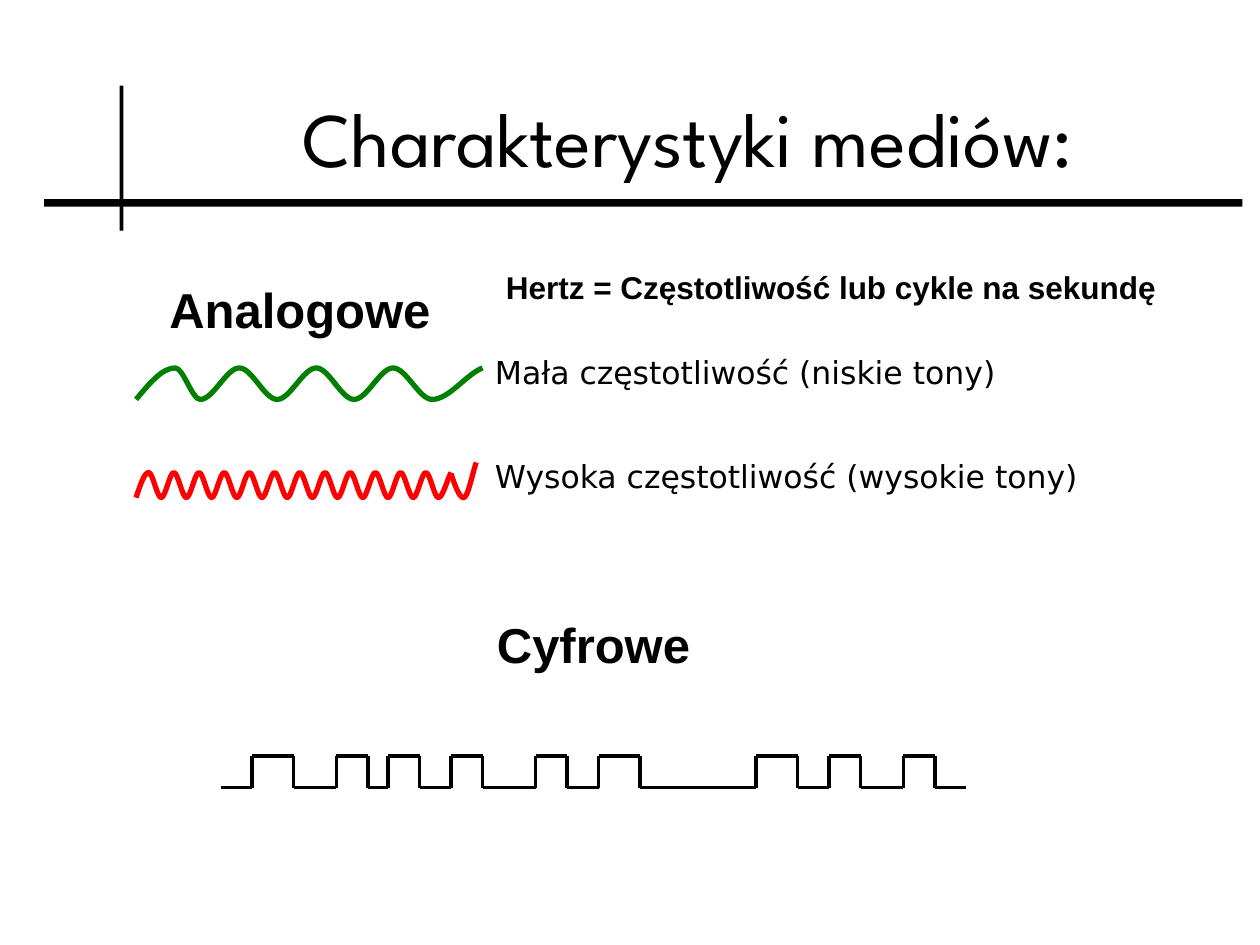
from itertools import pairwise

from lxml.etree import SubElement
from pptx import Presentation
from pptx.dml.color import RGBColor
from pptx.enum.shapes import MSO_CONNECTOR, MSO_SHAPE
from pptx.enum.text import MSO_ANCHOR, MSO_AUTO_SIZE, PP_ALIGN
from pptx.oxml.ns import qn
from pptx.util import Inches, Pt


def color(value):
    return RGBColor.from_string(value)


def bezier_points(knots):
    points = [knots[0][:2]]
    for (x0, y0, slope0), (x1, y1, slope1) in pairwise(knots):
        dx = (x1 - x0) / 3
        points += [(x0 + dx, y0 + slope0 * dx), (x1 - dx, y1 - slope1 * dx), (x1, y1)]
    return points


class SlideBuilder:
    """Holds the style and the current slide, and draws each kind of element."""

    ink = "000000"

    def __init__(self, prs):
        self.s = prs.slides.add_slide(prs.slide_layouts[6])

    def bar(self, x, y, w, h):
        sp = self.s.shapes.add_shape(
            MSO_SHAPE.RECTANGLE, Inches(x), Inches(y), Inches(w), Inches(h))
        sp.shadow.inherit = False
        sp.fill.solid()
        sp.fill.fore_color.rgb = color(self.ink)
        sp.line.fill.background()

    def text(self, x, y, w, h, text, size, font, bold=False, align=PP_ALIGN.CENTER,
             anchor=MSO_ANCHOR.TOP, fit=MSO_AUTO_SIZE.SHAPE_TO_FIT_TEXT):
        tf = self.s.shapes.add_textbox(
            Inches(x), Inches(y), Inches(w), Inches(h)).text_frame
        tf.word_wrap = True
        tf.auto_size = fit
        tf.vertical_anchor = anchor
        p = tf.paragraphs[0]
        p.text = text
        p.alignment = align
        p.font.size = Pt(size)
        p.font.name = font
        p.font.bold = bold
        p.font.color.rgb = color(self.ink)

    def wave(self, knots, line_color):
        start, *rest = [(Inches(x), Inches(y)) for x, y in bezier_points(knots)]
        builder = self.s.shapes.build_freeform(*start)
        builder.add_line_segments(rest, close=False)
        sp = builder.convert_to_shape()
        outline = next(sp._element.iter(qn("a:path")))
        segments = outline.findall(qn("a:lnTo"))
        for i in range(0, len(segments), 3):
            curve = SubElement(outline, qn("a:cubicBezTo"))
            for segment in segments[i:i + 3]:
                curve.append(segment[0])
                outline.remove(segment)
        sp.shadow.inherit = False
        sp.fill.background()
        sp.line.color.rgb = color(line_color)
        sp.line.width = Pt(3)

    def line(self, start, end):
        sp = self.s.shapes.add_connector(
            MSO_CONNECTOR.STRAIGHT, *map(Inches, start + end))
        sp.line.color.rgb = color(self.ink)
        sp.line.width = Pt(2)
        SubElement(sp._element.spPr, qn("a:effectLst"))

    def square_wave(self, edges, low, high):
        level, other = low, high
        for i, (x0, x1) in enumerate(pairwise(edges)):
            if i:
                self.line((x0, level), (x0, other))
                level, other = other, level
            self.line((x0, level), (x1, level))


def main():
    prs = Presentation()
    prs.slide_width, prs.slide_height = Inches(10), Inches(7.5)
    slide = SlideBuilder(prs)

    slide.bar(0.35, 1.58, 9.51, 0.06)
    slide.bar(0.95, 0.68, 0.03, 1.15)
    slide.text(1.07, 0.67, 8.93, 0.83, "Charakterystyki mediów: ", 44,
               "League Spartan", anchor=MSO_ANCHOR.MIDDLE, fit=MSO_AUTO_SIZE.NONE)

    low_tone_x = [1.39, 1.59, 1.9, 2.2, 2.51, 2.81, 3.12, 3.43]
    low_tone = [(x, 3.17 if i % 2 else 2.92, 0) for i, x in enumerate(low_tone_x)]
    slide.wave([(1.08, 3.17, -1.2), *low_tone, (3.83, 2.92, -0.4)], "008000")

    high_tone = [(1.18 + 0.1 * i, 3.95 if i % 2 else 3.75, 0) for i in range(24)]
    slide.wave([(1.08, 3.95, -3), *high_tone, (3.58, 3.75, -2)], "FF0000")
    slide.wave([(3.58, 3.76, 3), (3.68, 3.95, 0), (3.78, 3.67, -3)], "FF0000")

    slide.text(3.67, 2.08, 5.92, 0.4,
               "Hertz = Częstotliwość lub cykle na sekundę ", 18, "Arial", True)
    for y, width, label in ((2.75, 4.83, "Mała częstotliwość (niskie tony)"),
                            (3.58, 4.92, "Wysoka częstotliwość (wysokie tony)")):
        slide.text(3.83, y, width, 0.4, label, 18, "DejaVu Sans",
                   align=PP_ALIGN.LEFT)
    for x, y, heading in ((1.17, 2.17, "Analogowe"), (3.5, 4.83, "Cyfrowe")):
        slide.text(x, y, 2.42, 0.57, heading, 28, "Arial", True)

    slide.square_wave(
        [1.75, 2, 2.33, 2.67, 2.92, 3.08, 3.33, 3.58, 3.83, 4.25, 4.5,
         4.75, 5.08, 6, 6.33, 6.58, 6.83, 7.17, 7.42, 7.67],
        low=6.25, high=6)
    prs.save("out.pptx")


if __name__ == "__main__":
    main()
